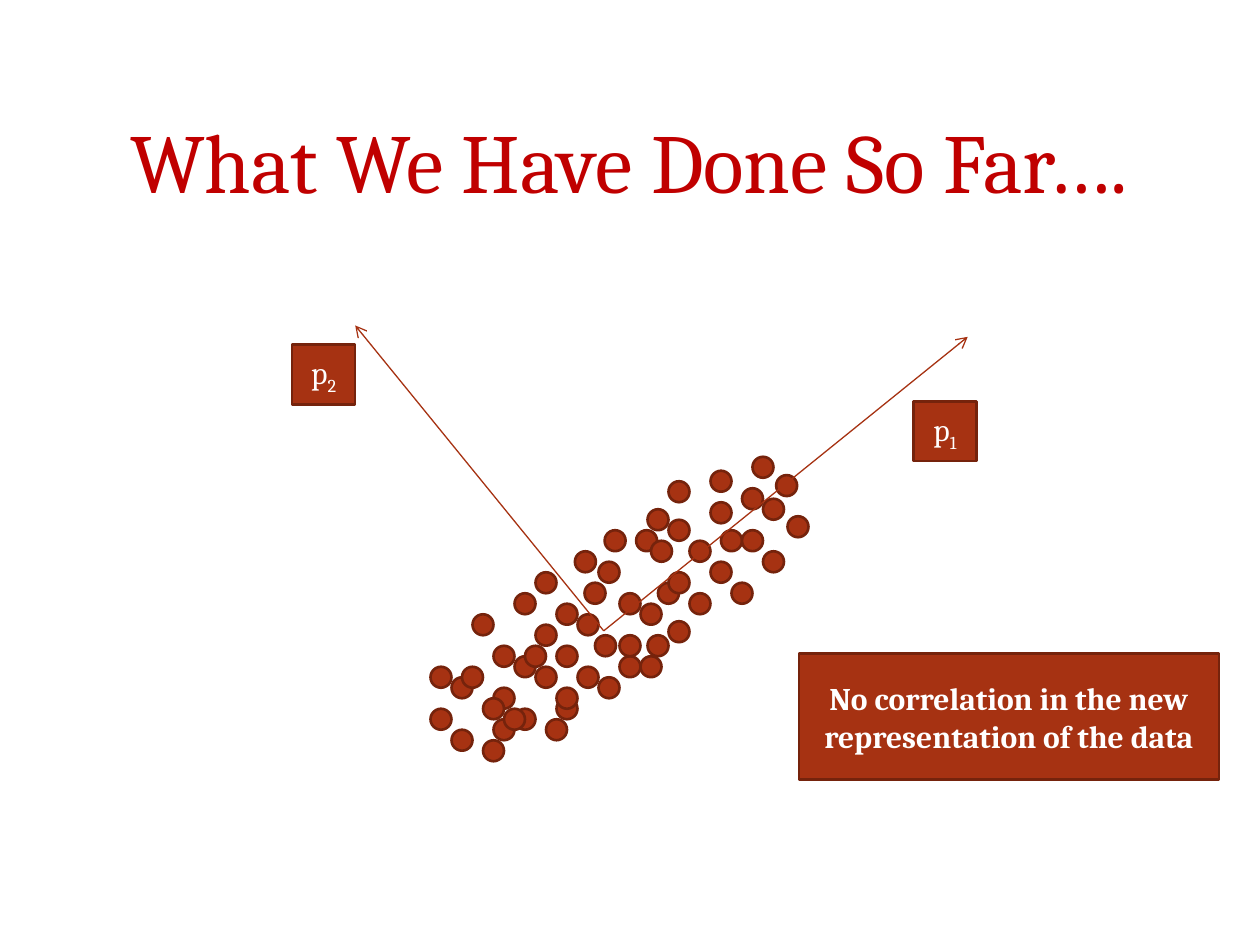
from lxml.etree import SubElement
from pptx import Presentation
from pptx.dml.color import RGBColor
from pptx.enum.shapes import MSO_CONNECTOR as Connector, MSO_SHAPE as Shape
from pptx.enum.text import MSO_ANCHOR as Anchor, MSO_AUTO_SIZE as AutoSize, PP_ALIGN as Align
from pptx.oxml.ns import qn
from pptx.util import Pt

TITLE = "What We Have Done So Far…."
BOXES = [
    ("p", "1", (522, 229.5, 36, 34)),
    ("p", "2", (167, 197, 36, 34)),
    ("No correlation in the new representation of the data", "", (456.5, 373.5, 240, 72)),
]
ORIGIN = (345, 360.5)
AXIS_TIPS = [(553, 192.5), (203, 186)]
DOT_SIZE = 12
DOTS = [
    (306, 327), (318, 345), (330, 351), (318, 369), (330, 381), (354, 375),
    (342, 321), (354, 339), (366, 345), (354, 363), (366, 375), (376, 333),
    (270, 351), (282, 369), (294, 375), (282, 393), (294, 405), (318, 399),
    (363.5, 303), (246, 381), (258, 387), (246, 405), (258, 417), (282, 411),
    (372, 309), (370, 291), (382, 297), (443.5, 271.5), (382, 327), (406, 321),
    (450, 295), (382, 355), (394, 309), (412, 303), (394, 339), (418, 333),
    (294, 339), (306, 357), (340, 363), (306, 381), (318, 393), (342, 387),
    (300, 369), (334, 333), (328.5, 315), (312, 411), (382, 275), (406, 269),
    (264, 381), (276, 399), (288, 405), (276, 423), (370, 363), (345.5, 303),
    (430, 261), (424, 279), (436, 285), (424, 303), (436, 315), (406, 287),
]
FONT = "Cambria"
RED = RGBColor(0xC0, 0x00, 0x00)
RUST = RGBColor(0xA6, 0x32, 0x12)
DARK_RUST = RGBColor(0x75, 0x23, 0x0C)
WHITE = RGBColor(0xFF, 0xFF, 0xFF)


def write(frame, text, subscript="", size=18, color=WHITE, bold=False):
    frame.word_wrap = True
    frame.auto_size = AutoSize.NONE
    frame.vertical_anchor = Anchor.MIDDLE
    paragraph = frame.paragraphs[0]
    paragraph.alignment = Align.CENTER
    for part, baseline in ((text, None), (subscript, "-25000")):
        if not part:
            continue
        run = paragraph.add_run()
        run.text = part
        run.font.name, run.font.size, run.font.bold = FONT, Pt(size), bold
        run.font.color.rgb = color
        if baseline:
            run._r.get_or_add_rPr().set("baseline", baseline)


def add_rust_shape(shapes, kind, *bounds):
    shape = shapes.add_shape(kind, *map(Pt, bounds))
    shape.shadow.inherit = False
    shape.fill.solid()
    shape.fill.fore_color.rgb = RUST
    shape.line.color.rgb = DARK_RUST
    shape.line.width = Pt(1.5)
    return shape


def add_axis(shapes, tip):
    axis = shapes.add_connector(Connector.STRAIGHT, *map(Pt, ORIGIN + tip))
    axis.line.color.rgb = RUST
    axis.line.width = Pt(0.75)
    SubElement(axis.line._get_or_add_ln(), qn("a:tailEnd"), type="arrow")
    SubElement(axis._element.spPr, qn("a:effectLst"))


def main():
    """Build the slide of a point cloud with its two principal axes."""
    deck = Presentation()
    deck.slide_width, deck.slide_height = Pt(720), Pt(540)
    slide = deck.slides.add_slide(deck.slide_layouts[5])

    title = slide.shapes.title
    title.left, title.top, title.width, title.height = map(Pt, (43, 34.5, 633, 114))
    write(title.text_frame, TITLE, size=48, color=RED)

    cloud = slide.shapes.add_group_shape()
    for left, top in DOTS:
        add_rust_shape(cloud.shapes, Shape.OVAL, left, top, DOT_SIZE, DOT_SIZE)

    axes = slide.shapes.add_group_shape()
    for tip in AXIS_TIPS:
        add_axis(axes.shapes, tip)

    for text, subscript, bounds in BOXES:
        box = add_rust_shape(slide.shapes, Shape.RECTANGLE, *bounds)
        write(box.text_frame, text, subscript, bold=not subscript)

    deck.save("out.pptx")


if __name__ == "__main__":
    main()
